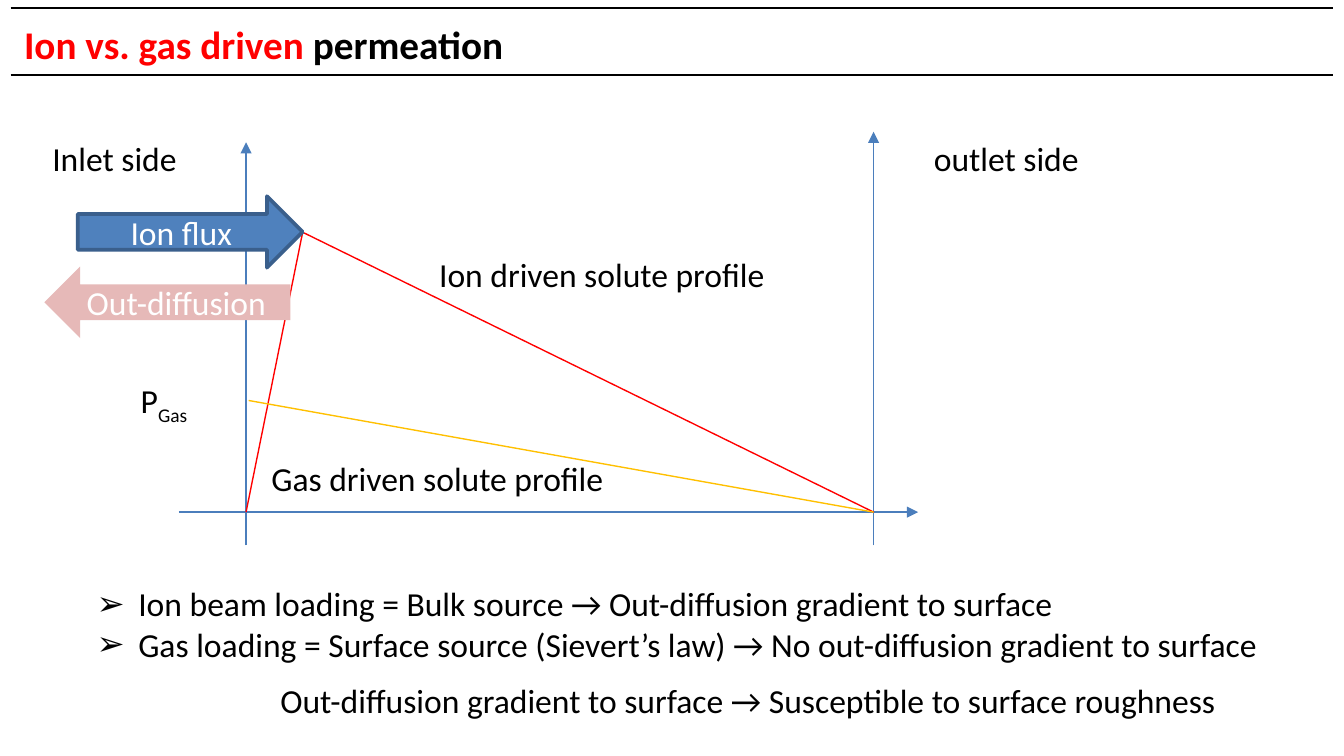
"""Build the slide on ion and gas driven permeation."""
from lxml import etree
from pptx import Presentation
from pptx.dml.color import RGBColor
from pptx.enum.shapes import MSO_CONNECTOR, MSO_SHAPE
from pptx.enum.text import MSO_ANCHOR, MSO_AUTO_SIZE, PP_ALIGN
from pptx.oxml.ns import qn
from pptx.util import Cm, Pt

STRAIGHT = MSO_CONNECTOR.STRAIGHT
RIGHT_ARROW, LEFT_ARROW = MSO_SHAPE.RIGHT_ARROW, MSO_SHAPE.LEFT_ARROW
TOP, MIDDLE = MSO_ANCHOR.TOP, MSO_ANCHOR.MIDDLE
LEFT, CENTER = PP_ALIGN.LEFT, PP_ALIGN.CENTER
NO_FIT = MSO_AUTO_SIZE.NONE

BLACK, WHITE, RED, BLUE, GOLD = "000000", "FFFFFF", "FF0000", "4B7EBC", "FFC000"
INLET, OUTLET, BASE = 4.65, 16.51, 9.68
PEAK = (5.72, 4.39)


def rgb(color):
    return RGBColor.from_string(color)


def style(run, color=BLACK, size=18, bold=False):
    run.font.name = "Calibri"
    run.font.size = Pt(size)
    run.font.bold = bold
    run.font.color.rgb = rgb(color)


prs = Presentation()
prs.slide_width, prs.slide_height = Cm(25.4), Cm(14.29)
s = prs.slides.add_slide(prs.slide_layouts[1])

lines = [
    (0.2, 1.42, 25.2, 1.42, BLACK, False),
    (0.2, 0.15, 25.2, 0.15, BLACK, False),
    (INLET, 10.31, INLET, 2.69, BLUE, True),
    (3.38, BASE, 17.35, BASE, BLUE, True),
    (OUTLET, 10.31, OUTLET, 2.49, BLUE, True),
    (INLET, BASE, *PEAK, RED, False),
    (*PEAK, OUTLET, BASE, RED, False),
    (4.7, 7.57, OUTLET, BASE, GOLD, False),
]
for x1, y1, x2, y2, color, arrow in lines:
    c = s.shapes.add_connector(STRAIGHT, Cm(x1), Cm(y1), Cm(x2), Cm(y2))
    c.line.color.rgb = rgb(color)
    c.line.width = Pt(0.75)
    if arrow:
        etree.SubElement(c.line._get_or_add_ln(), qn("a:tailEnd"), type="triangle")
    etree.SubElement(c._element.spPr, qn("a:effectLst"))

arrows = [
    (RIGHT_ARROW, 1.47, 3.71, 4.25, "Ion flux", "4F81BD", "3A5F8C"),
    (LEFT_ARROW, 0.84, 5.04, 4.65, "Out-diffusion", "E6B9B8", None),
]
for kind, x, y, w, text, fill, outline in arrows:
    sp = s.shapes.add_shape(kind, Cm(x), Cm(y), Cm(w), Cm(1.35))
    sp.shadow.inherit = False
    sp.fill.solid()
    sp.fill.fore_color.rgb = rgb(fill)
    if outline:
        sp.line.color.rgb = rgb(outline)
        sp.line.width = Pt(2)
    else:
        sp.line.fill.background()
    tf = sp.text_frame
    tf.text = text
    tf.word_wrap = True
    tf.vertical_anchor = MIDDLE
    p = tf.paragraphs[0]
    p.alignment = CENTER
    style(p.runs[0], WHITE)

labels = [
    (0.74, 2.49, 2.9, "Inlet side", ""),
    (17.4, 2.49, 3.28, "outlet side", ""),
    (2.41, 7.06, 1.5, "P", "Gas"),
    (8.05, 4.67, 6.73, "Ion driven solute profile", ""),
    (4.88, 8.53, 6.86, "Gas driven solute profile", ""),
    (5.05, 12.73, 18.67,
     "Out-diffusion gradient to surface → Susceptible to surface roughness", ""),
]
for x, y, w, text, subscript in labels:
    tf = s.shapes.add_textbox(Cm(x), Cm(y), Cm(w), Cm(1.02)).text_frame
    tf.text = text
    tf.word_wrap = False
    p = tf.paragraphs[0]
    style(p.runs[0])
    if subscript:
        r = p.add_run()
        r.text = subscript
        style(r)
        r.font._element.set("baseline", "-25000")

title, body = s.shapes.title, s.placeholders[1]
boxes = [(title, 0.2, 0.25, 9.68, 1.14), (body, 1.57, 10.9, 22.81, 1.8)]
for sp, x, y, w, h in boxes:
    sp.left, sp.top, sp.width, sp.height = Cm(x), Cm(y), Cm(w), Cm(h)
    tf = sp.text_frame
    tf.word_wrap = False
    tf.auto_size = NO_FIT
    tf.vertical_anchor = TOP

p = title.text_frame.paragraphs[0]
p.alignment = LEFT
for text, color in [("Ion vs. gas driven", RED), (" permeation", BLACK)]:
    r = p.add_run()
    r.text = text
    style(r, color, 21, True)

tf = body.text_frame
tf.text = (
    "Ion beam loading = Bulk source → Out-diffusion gradient to surface\n"
    "Gas loading = Surface source (Sievert’s law) → No out-diffusion gradient to surface"
)
for p in tf.paragraphs:
    pPr = p._p.get_or_add_pPr()
    pPr.set("marL", str(Cm(0.79)))
    pPr.set("indent", str(Cm(-0.79)))
    etree.SubElement(pPr, qn("a:buChar"), char="➢")
    p.space_before = Pt(0)
    style(p.runs[0])

prs.save("out.pptx")
